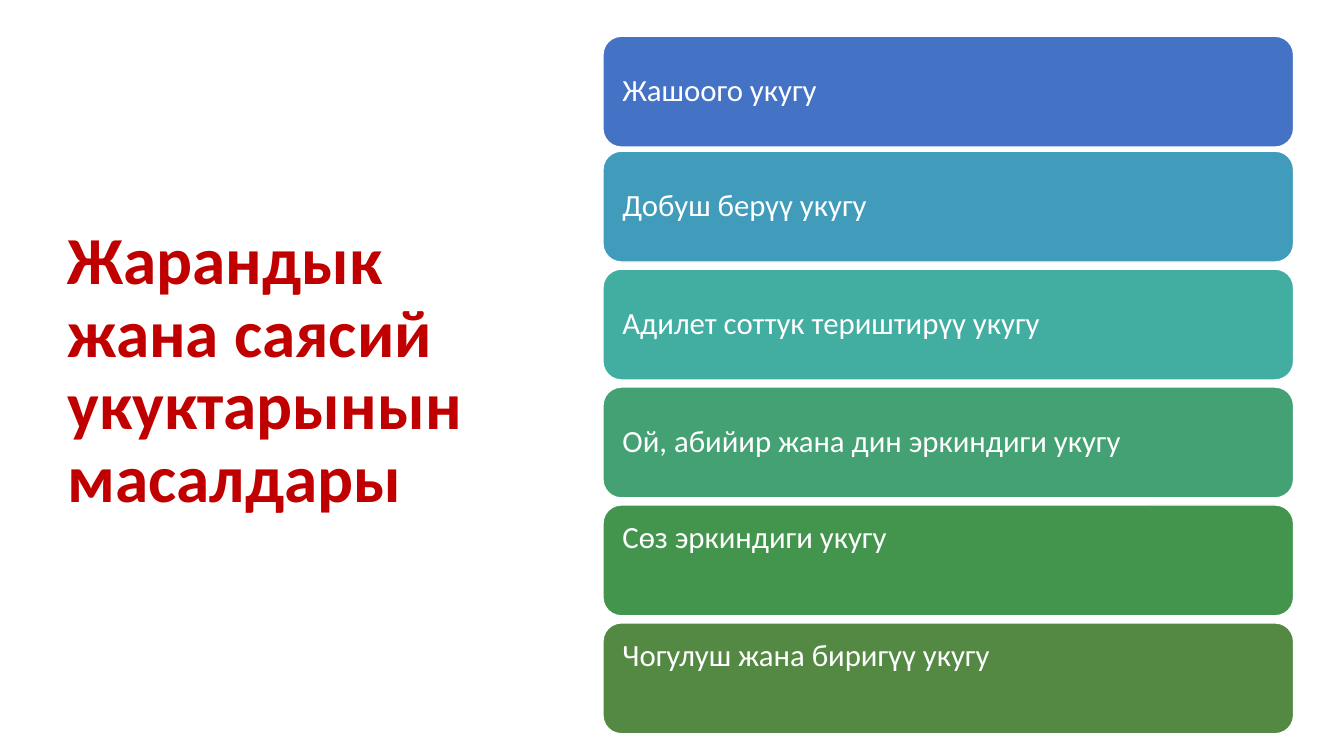
import pptx
import pptx.util
import pptx.dml.color
import pptx.enum.shapes
import pptx.enum.text

Inches = pptx.util.Inches
Pt = pptx.util.Pt

COLORS = {
    "title": "C00000",
    "white": "FFFFFF",
    "blue": "4472C4",
    "sky": "419BBB",
    "teal": "42AEA2",
    "mint": "43A173",
    "green": "43954E",
    "olive": "538943",
}

RIGHTS = [
    ("Жашоого укугу", "blue", 0.14),
    ("Добуш берүү укугу", "sky", 0.14),
    ("Адилет соттук териштирүү укугу", "teal", 0.14),
    ("Ой, абийир жана дин эркиндиги укугу", "mint", 0.14),
    ("Сөз эркиндиги укугу", "green", 0.57),
    ("Чогулуш жана биригүү укугу", "olive", 0.57),
]


def color(name):
    return pptx.dml.color.RGBColor.from_string(COLORS[name])


def write(frame, text, size, tint, bold=False):
    frame.text = text
    frame.word_wrap = True
    frame.auto_size = pptx.enum.text.MSO_AUTO_SIZE.NONE
    frame.vertical_anchor = pptx.enum.text.MSO_ANCHOR.MIDDLE
    para = frame.paragraphs[0]
    para.alignment = pptx.enum.text.PP_ALIGN.LEFT
    para.line_spacing = 0.9
    font = para.runs[0].font
    font.name = "Calibri"
    font.size = Pt(size)
    font.bold = bold
    font.color.rgb = color(tint)


def add_title(slide, text):
    title = slide.shapes.title
    title.left, title.top = Inches(0.57), Inches(0.68)
    title.width, title.height = Inches(4.16), Inches(6.02)
    write(title.text_frame, text, 48, "title", True)


def add_bar(slide, top, text, fill, bottom):
    bar = slide.shapes.add_shape(
        pptx.enum.shapes.MSO_SHAPE.ROUNDED_RECTANGLE,
        Inches(5.98), Inches(top), Inches(6.85), Inches(1.1))
    bar.shadow.inherit = False
    bar.fill.solid()
    bar.fill.fore_color.rgb = color(fill)
    bar.line.color.rgb = color("white")
    bar.line.width = Pt(1)
    frame = bar.text_frame
    write(frame, text, 22, "white")
    frame.margin_left = frame.margin_right = frame.margin_top = Inches(0.14)
    frame.margin_bottom = Inches(bottom)


def main():
    deck = pptx.Presentation()
    deck.slide_width, deck.slide_height = Inches(13.33), Inches(7.5)
    slide = deck.slides.add_slide(deck.slide_layouts.get_by_name("Title Only"))
    add_title(slide, "Жарандык жана саясий укуктарынын масалдары")
    tops = [0.36] + [1.5 + 1.17 * row for row in range(len(RIGHTS) - 1)]
    for top, (text, fill, bottom) in zip(tops, RIGHTS):
        add_bar(slide, top, text, fill, bottom)
    deck.save("out.pptx")


if __name__ == "__main__":
    main()
